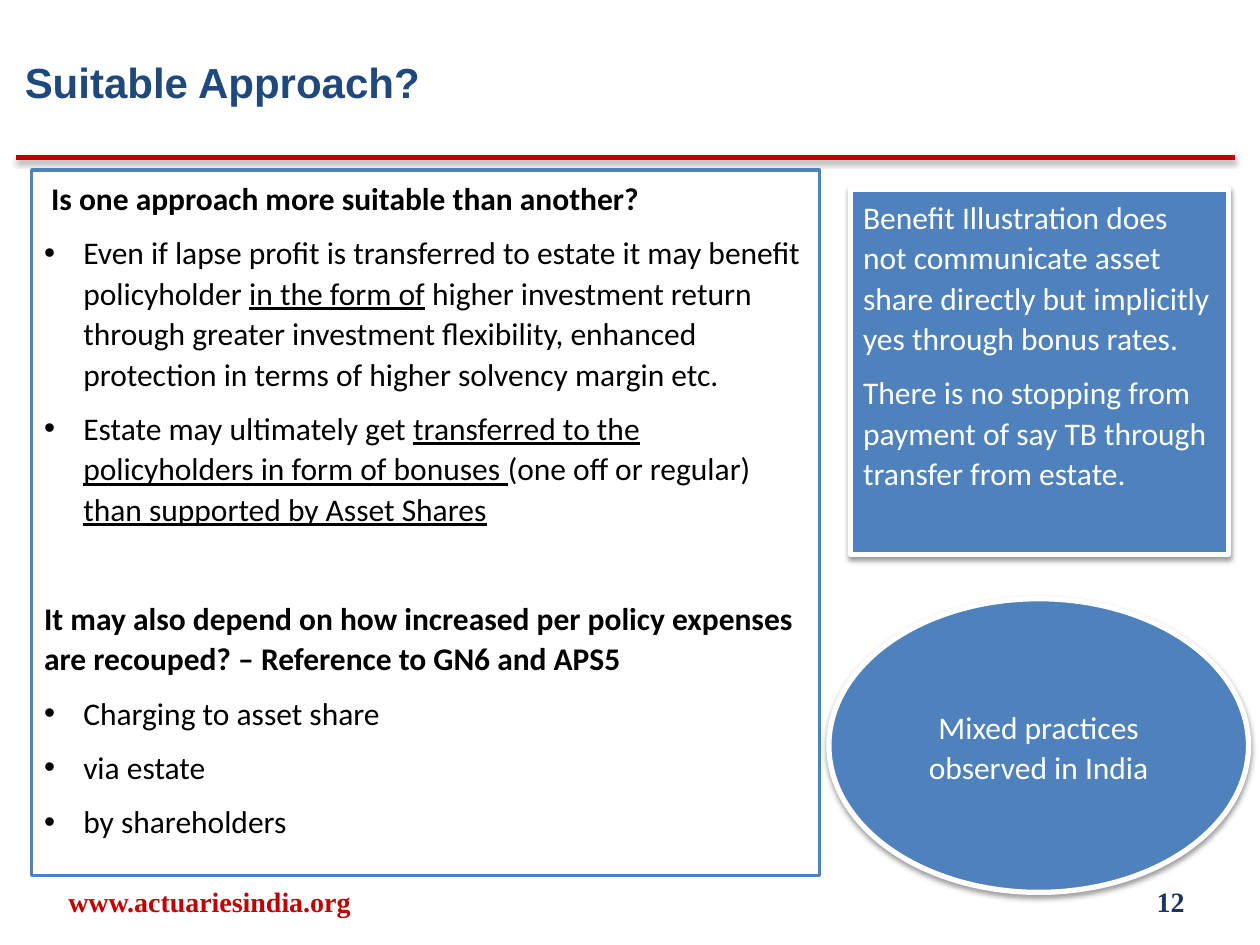
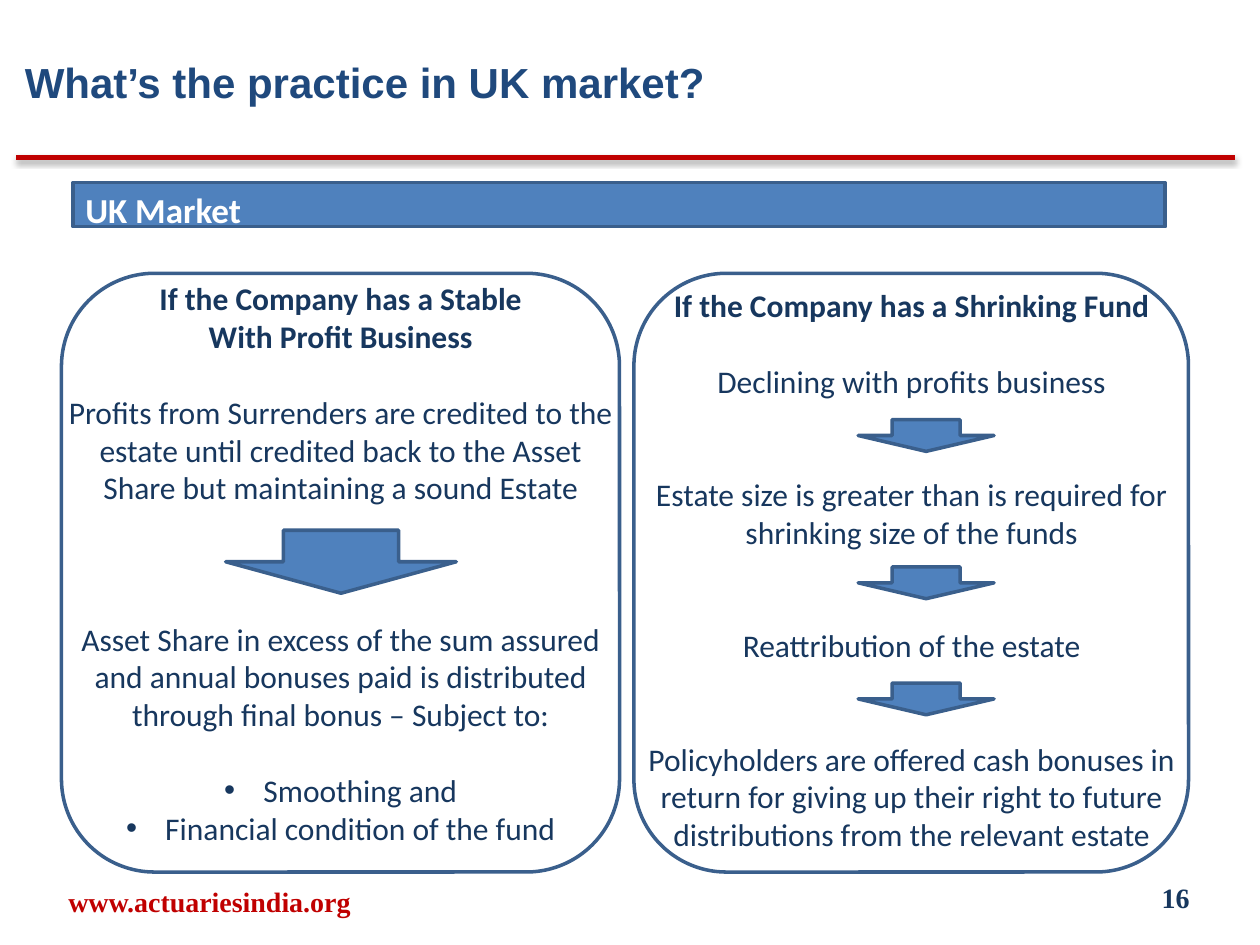
from lxml.etree import SubElement
from pptx import Presentation
from pptx.dml.color import RGBColor
from pptx.enum.shapes import MSO_CONNECTOR, MSO_SHAPE
from pptx.enum.text import MSO_ANCHOR, PP_ALIGN
from pptx.oxml.ns import qn
from pptx.util import Cm, Pt

WHITE = RGBColor(0xFF, 0xFF, 0xFF)
BLACK = RGBColor(0x00, 0x00, 0x00)
RED = RGBColor(0xC0, 0x00, 0x00)
TITLE_BLUE = RGBColor(0x1F, 0x49, 0x7D)
NAVY = RGBColor(0x17, 0x37, 0x5E)
BLUE = RGBColor(0x4F, 0x81, 0xBD)
EDGE_BLUE = RGBColor(0x3A, 0x5F, 0x8C)

LINE_HEIGHT = 21.6
AIRY = {"line_spacing": 1.07, "after": 8}


def write(frame, text, font="Calibri", size=18, color=NAVY, bold=False, align=PP_ALIGN.LEFT,
          bullet=False, margin=0, before=0, after=0, line_spacing=1.0):
    """Add a paragraph; words between underscores are underlined."""
    first = frame.paragraphs[0]
    paragraph = frame.add_paragraph() if first.runs else first
    properties = paragraph._p.get_or_add_pPr()
    if bullet:
        properties.set("marL", str(Cm(0.79)))
        properties.set("indent", str(-Cm(0.79)))
        SubElement(properties, qn("a:buFont"), typeface="Arial")
        SubElement(properties, qn("a:buChar"), char="•")
    elif margin:
        properties.set("marL", str(Cm(margin)))
    paragraph.alignment = align
    paragraph.line_spacing = line_spacing
    paragraph.space_before = Pt(before)
    paragraph.space_after = Pt(after)
    for index, words in enumerate(text.split("_")):
        if words:
            run = paragraph.add_run()
            run.text = words
            run.font.name = font
            run.font.size = Pt(size)
            run.font.bold = bold
            run.font.underline = index % 2 == 1
            run.font.color.rgb = color


def cast_shadow(effects):
    shadow = SubElement(effects, qn("a:outerShdw"), blurRad=str(Pt(3.1)), dist=str(Pt(1.6)),
                        dir="5400000", rotWithShape="0")
    tint = SubElement(shadow, qn("a:srgbClr"), val=str(BLACK))
    SubElement(tint, qn("a:alpha"), val="38000")


class Deck:
    def __init__(self):
        self.presentation = Presentation()
        self.presentation.slide_width = Cm(25.4)
        self.presentation.slide_height = Cm(19.05)
        self.slide = None

    def start_slide(self, title, number, number_left, number_top):
        self.slide = self.presentation.slides.add_slide(self.presentation.slide_layouts[6])
        self.title_rule()
        heading = self.text(0.25, 0.05, 22.86, 3.18, MSO_ANCHOR.MIDDLE)
        write(heading, title, font="Arial", size=24, color=TITLE_BLUE, bold=True)
        footer = {"font": "Times New Roman", "size": 16, "bold": True}
        site = self.text(0.2, 17.65, 8.05, 1.02, MSO_ANCHOR.MIDDLE)
        write(site, "www.actuariesindia.org", color=RED, align=PP_ALIGN.CENTER, **footer)
        page = self.text(number_left, number_top, 5.92, 1.02, MSO_ANCHOR.MIDDLE)
        write(page, number, align=PP_ALIGN.RIGHT, **footer)

    def title_rule(self):
        rule = self.slide.shapes.add_connector(
            MSO_CONNECTOR.STRAIGHT, Cm(0.33), Cm(3.18), Cm(24.89), Cm(3.18))
        rule.line.color.rgb = RED
        rule.line.width = Pt(3)
        cast_shadow(SubElement(rule._element.spPr, qn("a:effectLst")))

    def text(self, left, top, width, height, anchor=MSO_ANCHOR.TOP):
        frame = self.slide.shapes.add_textbox(Cm(left), Cm(top), Cm(width), Cm(height)).text_frame
        frame.word_wrap = True
        frame.vertical_anchor = anchor
        return frame

    def shape(self, kind, left, top, width, height, fill=BLUE, edge=EDGE_BLUE, weight=2,
              shadow=False, anchor=MSO_ANCHOR.TOP):
        shape = self.slide.shapes.add_shape(kind, Cm(left), Cm(top), Cm(width), Cm(height))
        if fill is None:
            shape.fill.background()
        else:
            shape.fill.solid()
            shape.fill.fore_color.rgb = fill
        shape.line.color.rgb = edge
        shape.line.width = Pt(weight)
        shape.shadow.inherit = False
        if shadow:
            cast_shadow(shape._element.spPr.find(qn("a:effectLst")))
        shape.text_frame.word_wrap = True
        shape.text_frame.vertical_anchor = anchor
        return shape.text_frame

    def steps(self, frame, steps):
        for text, blank_lines, style in steps:
            write(frame, text, align=PP_ALIGN.CENTER, before=blank_lines * LINE_HEIGHT, **style)


def build_approach(deck):
    deck.start_slide("Suitable Approach?", "12", 18.21, 17.65)
    question = deck.shape(MSO_SHAPE.RECTANGLE, 0.64, 3.43, 15.88, 14.22, fill=WHITE, edge=BLUE)
    bold, bullet = {"bold": True}, {"bullet": True}
    for text, style in [
        ("Is one approach more suitable than another?", {"bold": True, "margin": 0.14}),
        ("Even if lapse profit is transferred to estate it may benefit policyholder "
         "_in the form of_ higher investment return through greater investment flexibility, "
         "enhanced protection in terms of higher solvency margin etc.", bullet),
        ("Estate may ultimately get _transferred to the policyholders in form of bonuses _"
         "(one off or regular) _than supported by Asset Shares_", bullet),
        ("It may also depend on how increased per policy expenses are recouped? – "
         "Reference to GN6 and APS5", {**bold, "before": 31.1}),
        ("Charging to asset share", bullet),
        ("via estate", bullet),
        ("by shareholders", bullet),
    ]:
        write(question, text, color=BLACK, **AIRY, **style)

    raised = {"edge": WHITE, "weight": 3, "shadow": True}
    illustration = deck.shape(MSO_SHAPE.RECTANGLE, 17.15, 3.81, 7.62, 7.37, **raised)
    for text in [
        "Benefit Illustration does not communicate asset share directly but implicitly "
        "yes through bonus rates.",
        "There is no stopping from payment of say TB through transfer from estate.",
    ]:
        write(illustration, text, color=WHITE, **AIRY)
    practices = deck.shape(MSO_SHAPE.OVAL, 16.71, 12.07, 8.46, 5.92,
                           anchor=MSO_ANCHOR.MIDDLE, **raised)
    write(practices, "Mixed practices observed in India", color=WHITE,
          align=PP_ALIGN.CENTER, **AIRY)


def build_uk_market(deck):
    deck.start_slide("What’s the practice in UK market?", "16", 18.31, 17.58)
    deck.shape(MSO_SHAPE.FLOWCHART_PROCESS, 1.47, 3.68, 22.02, 0.89)
    write(deck.text(1.47, 3.68, 21.39, 1.88), "UK Market", size=20, color=WHITE, bold=True)

    bold, bullet, plain = {"bold": True}, {"bullet": True}, {}
    deck.steps(deck.text(1.04, 5.51, 11.66, 11.79), [
        ("If the Company has a Stable", 0, bold),
        ("With Profit Business", 0, bold),
        ("Profits from Surrenders are credited to the estate until credited back to the "
         "Asset Share but maintaining a sound Estate", 1, plain),
        ("Asset Share in excess of the sum assured and annual bonuses paid is distributed "
         "through final bonus – Subject to:", 3, plain),
        ("Smoothing and", 1, bullet),
        ("Financial condition of the fund", 0, bullet),
    ])
    deck.steps(deck.text(12.78, 5.64, 11.2, 12.57), [
        ("If the Company has a Shrinking Fund", 0, bold),
        ("Declining with profits business", 1, plain),
        ("Estate size is greater than is required for shrinking size of the funds", 2, plain),
        ("Reattribution of the estate", 2, plain),
        ("Policyholders are offered cash bonuses in return for giving up their right to "
         "future distributions from the relevant estate", 2, plain),
    ])
    for left, width in [(1.24, 11.25), (12.78, 11.18)]:
        deck.shape(MSO_SHAPE.ROUNDED_RECTANGLE, left, 5.51, width, 12.07, fill=None)
    deck.shape(MSO_SHAPE.DOWN_ARROW, 4.55, 10.69, 4.65, 1.27)
    for top in (8.46, 11.43, 13.77):
        deck.shape(MSO_SHAPE.DOWN_ARROW, 17.3, top, 2.74, 0.64)


def main():
    deck = Deck()
    build_approach(deck)
    build_uk_market(deck)
    deck.presentation.save("out.pptx")


if __name__ == "__main__":
    main()
